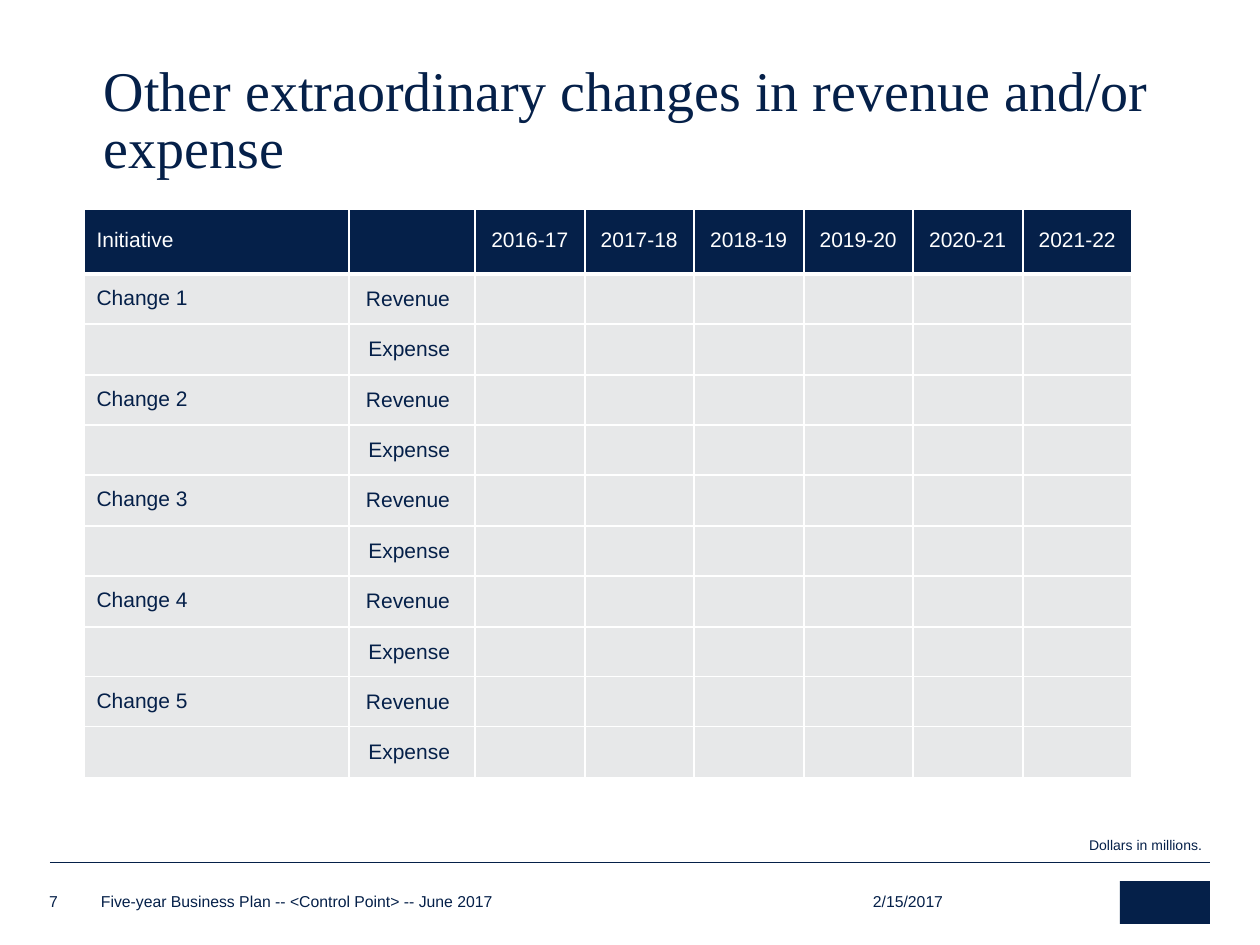
"""Build the slide on extraordinary changes in revenue and/or expense."""
from dataclasses import dataclass

from lxml import etree
from pptx import Presentation
from pptx.dml.color import RGBColor
from pptx.enum.shapes import MSO_CONNECTOR, MSO_SHAPE
from pptx.enum.text import MSO_ANCHOR, PP_ALIGN
from pptx.oxml.ns import qn
from pptx.util import Emu, Pt

TOP, MIDDLE, BOTTOM = MSO_ANCHOR.TOP, MSO_ANCHOR.MIDDLE, MSO_ANCHOR.BOTTOM
LEFT, CENTER, RIGHT = PP_ALIGN.LEFT, PP_ALIGN.CENTER, PP_ALIGN.RIGHT
RECTANGLE, STRAIGHT = MSO_SHAPE.RECTANGLE, MSO_CONNECTOR.STRAIGHT
NAVY, GREY, WHITE = "052049", "E7E8E9", "FFFFFF"
SERIF, SANS = "Times New Roman", "Arial"
YEARS = [f"{year}-{year - 1999}" for year in range(2016, 2022)]
COLUMN_WIDTHS = [265, 126] + [110, 109] * 3
ROW_HEIGHTS = [65] + [50, 51, 50, 50, 51] * 2


@dataclass
class Label:
    """A text box with its place in px and its format."""
    text: str
    x: int
    y: int
    w: int
    h: int
    size: int = 9
    font: str = SANS
    anchor: MSO_ANCHOR = BOTTOM
    spacing: float = 1.0
    inset_x: int = 0
    inset_y: int = 0


@dataclass
class Entry:
    """The text and format of one table cell."""
    text: str = ""
    fill: str = GREY
    color: str = NAVY
    align: PP_ALIGN = LEFT
    spacing: float = 0.9
    right_inset: int = 13


LABELS = [
    Label("Other extraordinary changes in revenue and/or expense", 91, 60, 1114, 129,
          size=32, font=SERIF, anchor=TOP, spacing=0.85, inset_x=13, inset_y=6),
    Label("2/15/2017", 873, 890, 127, 21),
    Label("Five-year Business Plan -- <Control Point> -- June 2017", 101, 892, 593, 19),
    Label("7", 49, 890, 34, 21),
    Label("Dollars in millions.", 1089, 838, 209, 15, size=8, anchor=TOP, spacing=0.9),
]


def px(value: int) -> Emu:
    """Turn px into EMU."""
    return Emu(round(value * 914400 / 126))


def rgb(color: str) -> RGBColor:
    """Turn a hex string into a colour."""
    return RGBColor.from_string(color)


def set_all(target, values: dict) -> None:
    """Set each named attribute on the target."""
    for name, value in values.items():
        setattr(target, name, value)


def write(p, text: str, size: int, font: str, color: str) -> None:
    """Add one formatted run to a paragraph."""
    r = p.add_run()
    r.text = text
    set_all(r.font, {"size": Pt(size), "name": font})
    r.font.color.rgb = rgb(color)


def draw_label(s, label: Label) -> None:
    """Draw a text box."""
    sp = s.shapes.add_textbox(*map(px, (label.x, label.y, label.w, label.h)))
    tf = sp.text_frame
    set_all(tf, {
        "word_wrap": True, "vertical_anchor": label.anchor,
        "margin_left": px(label.inset_x), "margin_right": px(label.inset_x),
        "margin_top": px(label.inset_y), "margin_bottom": px(label.inset_y),
    })
    p = tf.paragraphs[0]
    p.line_spacing = label.spacing
    write(p, label.text, label.size, label.font, NAVY)


def draw_borders(cell, top: int, bottom: int) -> None:
    """Give a cell white borders, with top and bottom widths in points."""
    properties = cell._tc.get_or_add_tcPr()
    for side, width in {"lnL": 1, "lnR": 1, "lnT": top, "lnB": bottom}.items():
        line = etree.SubElement(properties, qn(f"a:{side}"), w=str(Pt(width)))
        fill = etree.SubElement(line, qn("a:solidFill"))
        etree.SubElement(fill, qn("a:srgbClr"), val=WHITE)


def draw_cell(cell, entry: Entry, row: int) -> None:
    """Fill in and format one table cell."""
    draw_borders(cell, 3 if row == 1 else 1, 3 if row == 0 else 1)
    cell.fill.solid()
    cell.fill.fore_color.rgb = rgb(entry.fill)
    set_all(cell, {"vertical_anchor": MIDDLE, "margin_right": px(entry.right_inset)})
    p = cell.text_frame.paragraphs[0]
    set_all(p, {"alignment": entry.align, "line_spacing": entry.spacing})
    if entry.text:
        write(p, entry.text, 12, SANS, entry.color)
    else:
        etree.SubElement(p._p, qn("a:endParaRPr"), sz="1200")


def table_entries() -> list[list[Entry]]:
    """List the header and the revenue and expense rows of each change."""
    header = [Entry("Initiative", NAVY, WHITE), Entry("", NAVY)]
    rows = [header + [Entry(year, NAVY, WHITE, CENTER) for year in YEARS]]
    for number in range(1, 6):
        for name, kind in ((f"Change {number}", "Revenue"), ("", "Expense")):
            kind_entry = Entry(kind, align=RIGHT, spacing=1.0, right_inset=25)
            rows.append([Entry(name), kind_entry] + [Entry() for _ in YEARS])
    return rows


def draw_table(s) -> None:
    """Draw the table of changes by year."""
    size = len(ROW_HEIGHTS), len(COLUMN_WIDTHS)
    place = 84, 209, sum(COLUMN_WIDTHS), sum(ROW_HEIGHTS)
    table = s.shapes.add_table(*size, *map(px, place)).table
    for column, width in zip(table.columns, COLUMN_WIDTHS):
        column.width = px(width)
    for row, height in zip(table.rows, ROW_HEIGHTS):
        row.height = px(height)
    for i, entries in enumerate(table_entries()):
        for j, entry in enumerate(entries):
            draw_cell(table.cell(i, j), entry, i)


def draw_footer_marks(s) -> None:
    """Draw the footer rule and the plain block at its right end."""
    rule = s.shapes.add_connector(STRAIGHT, *map(px, (50, 862, 1210, 862)))
    rule.line.color.rgb = rgb(NAVY)
    rule.line.width = Pt(0.25)
    etree.SubElement(rule._element.spPr, qn("a:effectLst"))
    block = s.shapes.add_shape(RECTANGLE, *map(px, (1120, 881, 90, 43)))
    block.shadow.inherit = False
    block.fill.solid()
    block.fill.fore_color.rgb = rgb(NAVY)
    block.line.fill.background()


def main() -> None:
    """Build and save the slide."""
    prs = Presentation()
    set_all(prs, {"slide_width": px(1260), "slide_height": px(945)})
    s = prs.slides.add_slide(prs.slide_layouts[6])
    draw_footer_marks(s)
    for label in LABELS:
        draw_label(s, label)
    draw_table(s)
    prs.save("out.pptx")


if __name__ == "__main__":
    main()
